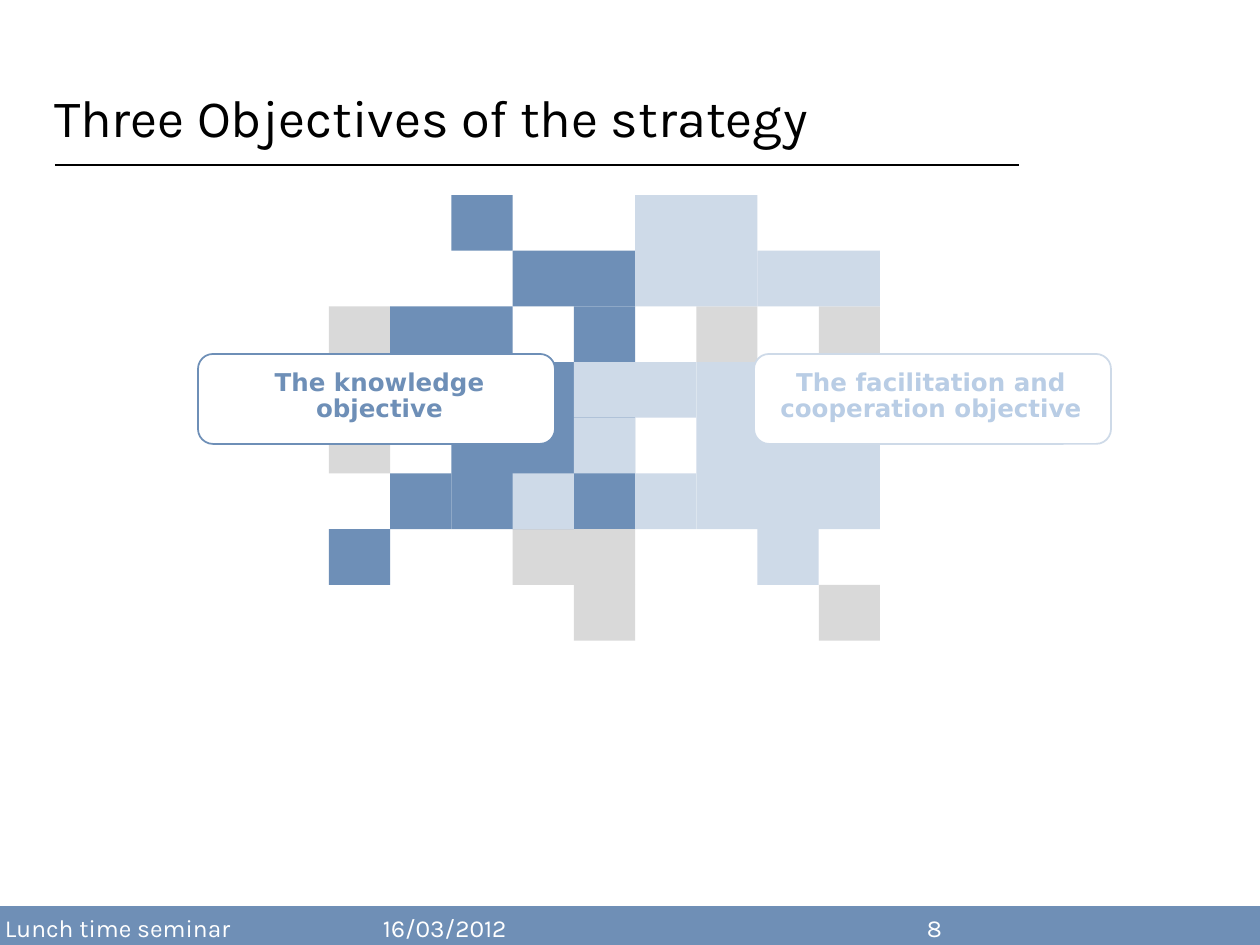
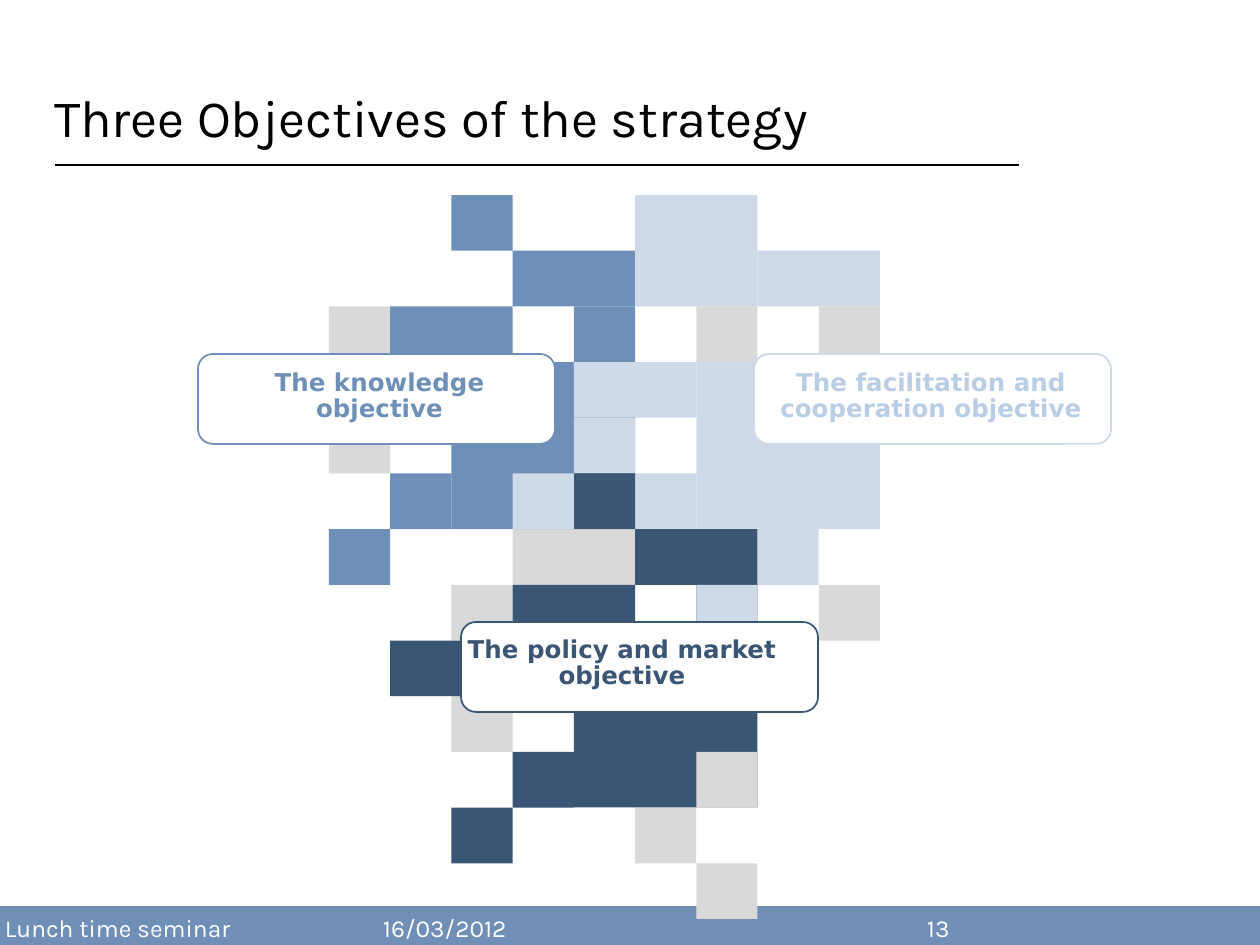
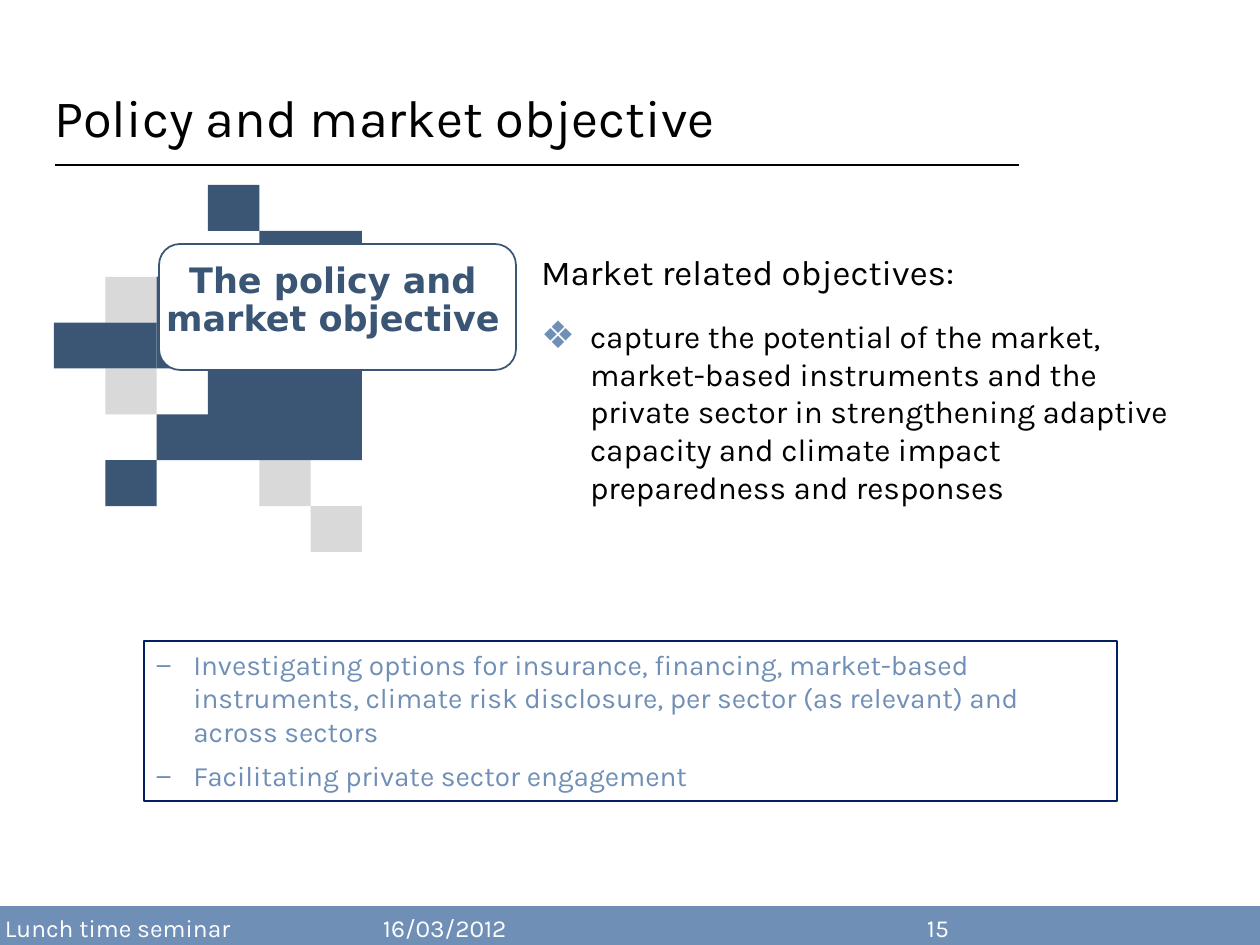
import lxml.etree
import pptx
import pptx.util
import pptx.dml.color
import pptx.enum.shapes
import pptx.enum.text
import pptx.oxml.ns

RGBColor = pptx.dml.color.RGBColor
ShapeType = pptx.enum.shapes.MSO_SHAPE
Align = pptx.enum.text.PP_ALIGN
Anchor = pptx.enum.text.MSO_ANCHOR
Pt = pptx.util.Pt
qn = pptx.oxml.ns.qn

# Colours and fonts
BLACK = RGBColor(0x00, 0x00, 0x00)
WHITE = RGBColor(0xFF, 0xFF, 0xFF)
GREY = RGBColor(0xD9, 0xD9, 0xD9)
BAND_BLUE = RGBColor(0x6F, 0x8F, 0xB6)
BLUE = RGBColor(0x6E, 0x8F, 0xB7)
LIGHT_BLUE = RGBColor(0xCE, 0xDA, 0xE8)
LIGHT_TEXT = RGBColor(0xB9, 0xCD, 0xE5)
DARK_BLUE = RGBColor(0x3B, 0x55, 0x75)
NAVY = RGBColor(0x00, 0x20, 0x60)
BODY_FONT = "Karla"
LABEL_FONT = "DejaVu Sans"

PX = 914400 / 126  # EMU in one px

# Mosaic tiles: column, row, columns wide, rows high
CORE = [(4, 1, 2, 1), (3, 0, 1, 1), (2, 2, 2, 2), (2, 5, 1, 1), (3, 3, 3, 3), (1, 6, 1, 1)]
CORE_GREY = [(1, 2, 1, 1), (1, 4, 1, 1), (4, 6, 1, 1), (5, 7, 1, 1)]
SIDE = [(5, 2, 1, 1)]
ARM = [(0, 3, 2, 1)]
WIDE = [(1, 3, 2, 1), (1, 4, 1, 1), (4, 6, 1, 1), (4, 1, 2, 1), (2, 0, 2, 2), (2, 5, 1, 1),
        (3, 3, 3, 3)]
WIDE_GREY = [(3, 2, 1, 1), (1, 6, 1, 1), (5, 7, 1, 1), (5, 2, 1, 1)]

# Grids: left, top, column step, row step
LARGE_GRID = (329, 195, 551 / 9, 724 / 13)
SMALL_GRID = (54, 185, 308 / 6, 367 / 8)

# Layers: tiles, colour, column offset, row offset
KNOWLEDGE = [(CORE_GREY, GREY, -1, 0), (CORE + SIDE, BLUE, -1, 0)]
FACILITATION = [(WIDE_GREY, GREY, 3, 0), (WIDE, LIGHT_BLUE, 3, 0)]
POLICY = [(CORE_GREY, GREY, 1, 5), (CORE + SIDE + ARM, DARK_BLUE, 1, 5)]
SHARED_TILE = [([(3, 5, 1, 1)], LIGHT_BLUE, 0, 0)]
LOOSE_TILES = [([(6, 10, 1, 1)], GREY, 0, 0), ([(6, 7, 1, 1)], LIGHT_BLUE, 0, 0)]
SMALL_POLICY = [(CORE_GREY, GREY, 0, 0), (CORE + ARM, DARK_BLUE, 0, 0)]

# Labels: text, card box, text box, line colour, text colour, size
KNOWLEDGE_LABEL = ("The knowledge objective", (198, 354, 357, 90), (218, 364, 323, 67),
                   BLUE, BLUE, 14)
FACILITATION_LABEL = ("The facilitation and cooperation objective", (754, 354, 357, 90),
                      (745, 364, 372, 67), LIGHT_BLUE, LIGHT_TEXT, 14)
POLICY_LABEL = ("The policy and market objective", (461, 622, 357, 90), (436, 631, 372, 67),
                DARK_BLUE, DARK_BLUE, 14)
SMALL_POLICY_LABEL = ("The policy and market objective", (159, 244, 357, 126),
                      (147, 257, 372, 126), DARK_BLUE, DARK_BLUE, 20)

# Slides: layout, title, page number, grid, mosaic layers, labels
SLIDES = [
    (5, "Three Objectives of the strategy", 8, LARGE_GRID,
     KNOWLEDGE + FACILITATION + SHARED_TILE, [KNOWLEDGE_LABEL, FACILITATION_LABEL]),
    (5, "Three Objectives of the strategy", 13, LARGE_GRID,
     KNOWLEDGE + FACILITATION + POLICY + SHARED_TILE + LOOSE_TILES,
     [KNOWLEDGE_LABEL, FACILITATION_LABEL, POLICY_LABEL]),
    (1, "Policy and market objective", 15, SMALL_GRID, SMALL_POLICY, [SMALL_POLICY_LABEL]),
]


def add_block(slide, kind, box, fill=None, line=None, width=1):
    shape = slide.shapes.add_shape(kind, *[round(length * PX) for length in box])
    shape.shadow.inherit = False
    if fill is None:
        shape.fill.background()
    else:
        shape.fill.solid()
        shape.fill.fore_color.rgb = fill
    if line is None:
        shape.line.fill.background()
    else:
        shape.line.color.rgb = line
        shape.line.width = Pt(width)
    return shape


def write(paragraph, text, size, colour, font=BODY_FONT, bold=False, bullet=None, indent=0,
          bullet_colour=None, **paragraph_format):
    properties = paragraph._p.get_or_add_pPr()
    properties.set("marL", str(round(indent * PX)))
    properties.set("indent", str(round(-indent * PX)))
    if bullet_colour is not None:
        holder = lxml.etree.SubElement(properties, qn("a:buClr"))
        lxml.etree.SubElement(holder, qn("a:srgbClr"), val=str(bullet_colour))
        lxml.etree.SubElement(properties, qn("a:buSzPct"), val="120000")
    if bullet:
        lxml.etree.SubElement(properties, qn("a:buFont"), typeface=font)
        lxml.etree.SubElement(properties, qn("a:buChar"), char=bullet)
    else:
        lxml.etree.SubElement(properties, qn("a:buNone"))
    for name, value in {"alignment": Align.LEFT, "space_before": Pt(0), **paragraph_format}.items():
        setattr(paragraph, name, value)
    run = paragraph.add_run()
    run.text = text
    for name, value in {"name": font, "size": Pt(size), "bold": bold}.items():
        setattr(run.font, name, value)
    run.font.color.rgb = colour


presentation = pptx.Presentation()
presentation.slide_width = round(1260 * PX)
presentation.slide_height = round(945 * PX)

for layout, title, page, grid, layers, labels in SLIDES:
    slide = presentation.slides.add_slide(presentation.slide_layouts[layout])

    # Title and rule
    shape = slide.shapes.title
    for name, value in {"left": 54, "top": 38, "width": 1134, "height": 157}.items():
        setattr(shape, name, round(value * PX))
    for name, value in {"margin_left": 0, "vertical_anchor": Anchor.MIDDLE,
                        "auto_size": pptx.enum.text.MSO_AUTO_SIZE.NONE}.items():
        setattr(shape.text_frame, name, value)
    write(shape.text_frame.paragraphs[0], title, 30, BLACK)
    rule = slide.shapes.add_connector(pptx.enum.shapes.MSO_CONNECTOR.STRAIGHT,
                                      *[round(length * PX) for length in (55, 165, 1019, 165)])
    rule.line.color.rgb = BLACK
    rule.line.width = Pt(1.5)
    lxml.etree.SubElement(rule._element.spPr, qn("a:effectLst"))

    # Footer band with event, date and page number
    add_block(slide, ShapeType.RECTANGLE, (0, 906, 1260, 43), BAND_BLUE)
    for text, left, width in [("Lunch time seminar", 5, 300), ("16/03/2012", 383, 200),
                              (str(page), 927, 100)]:
        footer = slide.shapes.add_textbox(*[round(length * PX) for length in (left, 906, width, 43)])
        for name, value in {"margin_left": 0, "word_wrap": True,
                            "vertical_anchor": Anchor.MIDDLE}.items():
            setattr(footer.text_frame, name, value)
        write(footer.text_frame.paragraphs[0], text, 14, WHITE)

    # Mosaic
    left, top, column_step, row_step = grid
    for tiles, colour, column_offset, row_offset in layers:
        for column, row, columns, rows in tiles:
            box = (left + (column + column_offset) * column_step,
                   top + (row + row_offset) * row_step,
                   columns * column_step, rows * row_step)
            add_block(slide, ShapeType.RECTANGLE, box, colour)

    # Labels
    for text, card_box, text_box, line, colour, size in labels:
        add_block(slide, ShapeType.ROUNDED_RECTANGLE, card_box, WHITE, line)
        label = slide.shapes.add_textbox(*[round(length * PX) for length in text_box])
        label.text_frame.word_wrap = True
        write(label.text_frame.paragraphs[0], text, size, colour, LABEL_FONT, True,
              alignment=Align.CENTER, line_spacing=0.9)

# Market objectives on the last slide
body = slide.placeholders[1]
for name, value in {"left": 541, "top": 244, "width": 649, "height": 285}.items():
    setattr(body, name, round(value * PX))
body.text_frame.margin_left = 0
body.text_frame.auto_size = pptx.enum.text.MSO_AUTO_SIZE.NONE
write(body.text_frame.paragraphs[0], "Market related objectives:", 20, BLACK, space_after=Pt(10))
write(body.text_frame.add_paragraph(),
      "capture the potential of the market, market-based instruments and the private sector in "
      "strengthening adaptive capacity and climate impact preparedness and responses",
      18, BLACK, bullet="❖", indent=49, bullet_colour=BAND_BLUE, space_before=Pt(4))

# Framed list of actions
frame = add_block(slide, ShapeType.RECTANGLE, (144, 641, 973, 160), line=NAVY, width=0.75)
frame.text_frame.vertical_anchor = Anchor.TOP
write(frame.text_frame.paragraphs[0],
      "Investigating options for insurance, financing, market-based instruments, climate risk "
      "disclosure, per sector (as relevant) and across sectors",
      16, BAND_BLUE, bullet="−", indent=37)
write(frame.text_frame.add_paragraph(), "Facilitating private sector engagement",
      16, BAND_BLUE, bullet="−", indent=37, space_before=Pt(3), line_spacing=1.15)

presentation.save("out.pptx")
